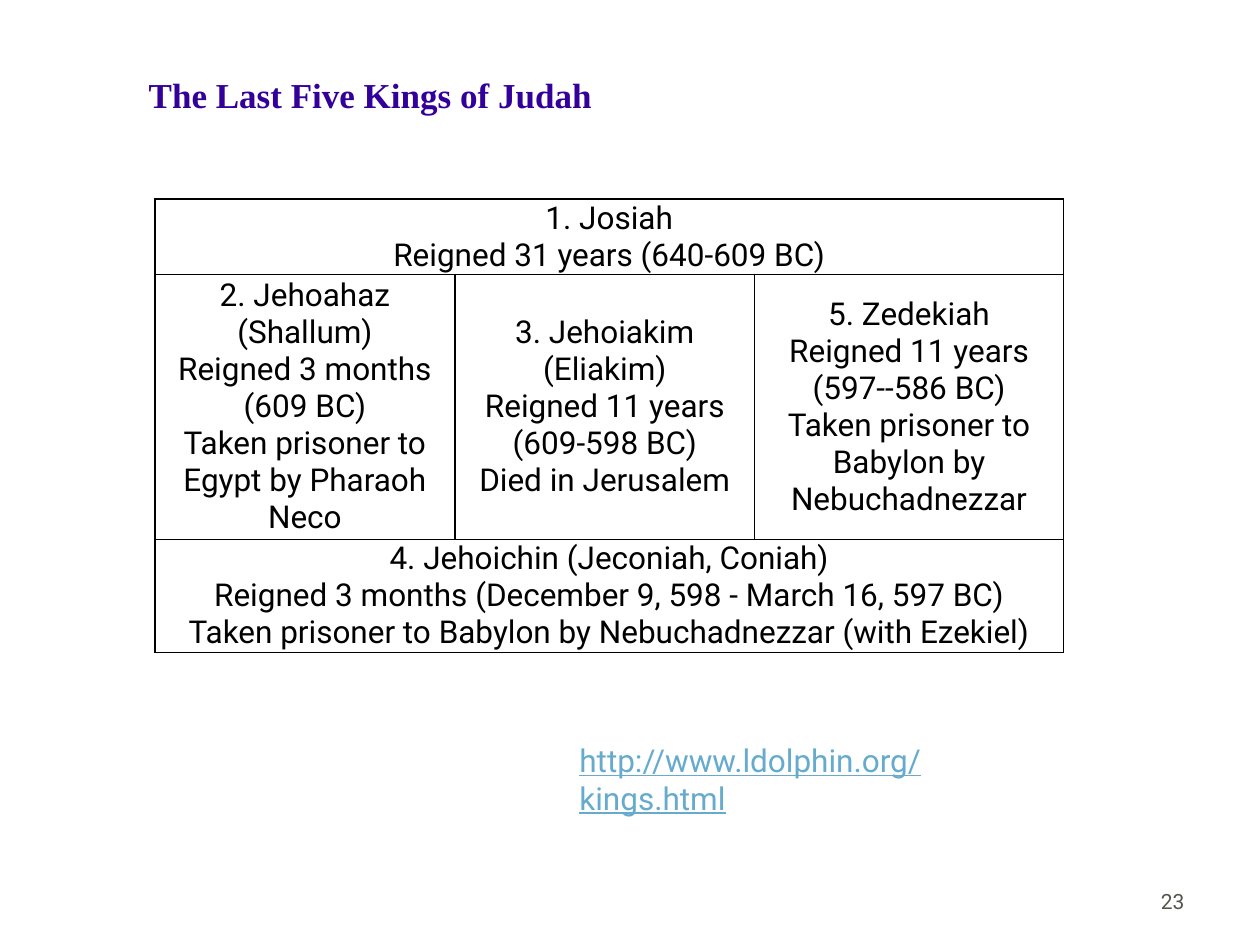
from lxml import etree
from pptx import Presentation
from pptx.dml.color import RGBColor
from pptx.enum.text import MSO_ANCHOR, PP_ALIGN
from pptx.oxml.ns import qn
from pptx.util import Inches, Pt

TOP, MIDDLE = MSO_ANCHOR.TOP, MSO_ANCHOR.MIDDLE
LEFT, CENTER, RIGHT = PP_ALIGN.LEFT, PP_ALIGN.CENTER, PP_ALIGN.RIGHT
TITLE_ONLY = 5

BLACK = RGBColor(0x00, 0x00, 0x00)
PURPLE = RGBColor(0x33, 0x00, 0x99)
LINK_BLUE = RGBColor(0x66, 0xAA, 0xCD)
GREY = RGBColor(0x55, 0x55, 0x4A)

TITLE_FONT = dict(name="Times New Roman", size=Pt(20), bold=True)
CELL_FONT = dict(name="Roboto", size=Pt(18), bold=False)
LINK_FONT = dict(name="Roboto", size=Pt(18), underline=True)
NUMBER_FONT = dict(name="Roboto", size=Pt(12))

COL_WIDTHS = [2.38, 2.38, 2.45]
ROW_HEIGHTS = [0.6, 2.1, 0.9]
# Each row lists its kings; a lone king spans the whole row
KINGS = [
    [["1. Josiah", "Reigned 31 years (640-609 BC)"]],
    [
        ["2. Jehoahaz (Shallum)", "Reigned 3 months (609 BC)",
         "Taken prisoner to Egypt by Pharaoh Neco"],
        ["3. Jehoiakim (Eliakim)", "Reigned 11 years (609-598 BC)",
         "Died in Jerusalem"],
        ["5. Zedekiah", "Reigned 11 years (597--586 BC)",
         "Taken prisoner to Babylon by Nebuchadnezzar"],
    ],
    [["4. Jehoichin (Jeconiah, Coniah)",
      "Reigned 3 months (December 9, 598 - March 16, 597 BC)",
      "Taken prisoner to Babylon by Nebuchadnezzar (with Ezekiel)"]],
]


def write_lines(tf, lines, font, color, align):
    """Write lines as one paragraph with line breaks."""
    p = tf.paragraphs[0]
    p.alignment = align
    for i, line in enumerate(lines):
        if i:
            p.add_line_break()
        r = p.add_run()
        r.text = line
        for key, value in font.items():
            setattr(r.font, key, value)
        r.font.color.rgb = color


def fill_box(s, box, text, font, color, align=LEFT, anchor=TOP):
    s.left, s.top, s.width, s.height = map(Inches, box)
    tf = s.text_frame
    tf.word_wrap = True
    tf.vertical_anchor = anchor
    write_lines(tf, [text], font, color, align)


def add_text(slide, box, *args, **kwargs):
    fill_box(slide.shapes.add_textbox(*map(Inches, box)), box, *args, **kwargs)


def style_cell(cell):
    """Thin black borders, no fill, no margins."""
    tc_pr = cell._tc.get_or_add_tcPr()
    for side in ("lnL", "lnR", "lnT", "lnB"):
        ln = etree.SubElement(tc_pr, qn(f"a:{side}"), w=str(Pt(1)))
        solid = etree.SubElement(ln, qn("a:solidFill"))
        etree.SubElement(solid, qn("a:srgbClr"), val=str(BLACK))
    cell.fill.background()
    cell.vertical_anchor = MIDDLE
    for side in ("left", "right", "top", "bottom"):
        setattr(cell, f"margin_{side}", 0)


def add_kings_table(slide, left, top):
    size = (sum(COL_WIDTHS), sum(ROW_HEIGHTS))
    table = slide.shapes.add_table(
        len(ROW_HEIGHTS), len(COL_WIDTHS), *map(Inches, (left, top, *size))).table
    table.first_row = table.horz_banding = False
    for col, width in zip(table.columns, COL_WIDTHS):
        col.width = Inches(width)
    for row, height in zip(table.rows, ROW_HEIGHTS):
        row.height = Inches(height)
    for cell in table.iter_cells():
        style_cell(cell)
    for i, kings in enumerate(KINGS):
        if len(kings) == 1:
            table.cell(i, 0).merge(table.cell(i, len(COL_WIDTHS) - 1))
        for j, lines in enumerate(kings):
            write_lines(table.cell(i, j).text_frame, lines, CELL_FONT, BLACK, CENTER)


def main():
    prs = Presentation()
    prs.slide_width, prs.slide_height = Inches(10), Inches(7.5)
    slide = prs.slides.add_slide(prs.slide_layouts[TITLE_ONLY])

    # Title
    fill_box(slide.shapes.title, (1.08, 0.53, 3.74, 0.77),
             "The Last Five Kings of Judah", TITLE_FONT, PURPLE)
    # Kings and their reigns
    add_kings_table(slide, 1.23, 1.58)
    # Web address
    add_text(slide, (4.5, 5.83, 3.95, 0.71),
             "http://www.ldolphin.org/kings.html", LINK_FONT, LINK_BLUE)
    # Slide number
    add_text(slide, (7.17, 6.95, 2.33, 0.4), "23", NUMBER_FONT, GREY,
             align=RIGHT, anchor=MIDDLE)

    prs.save("out.pptx")


if __name__ == "__main__":
    main()
